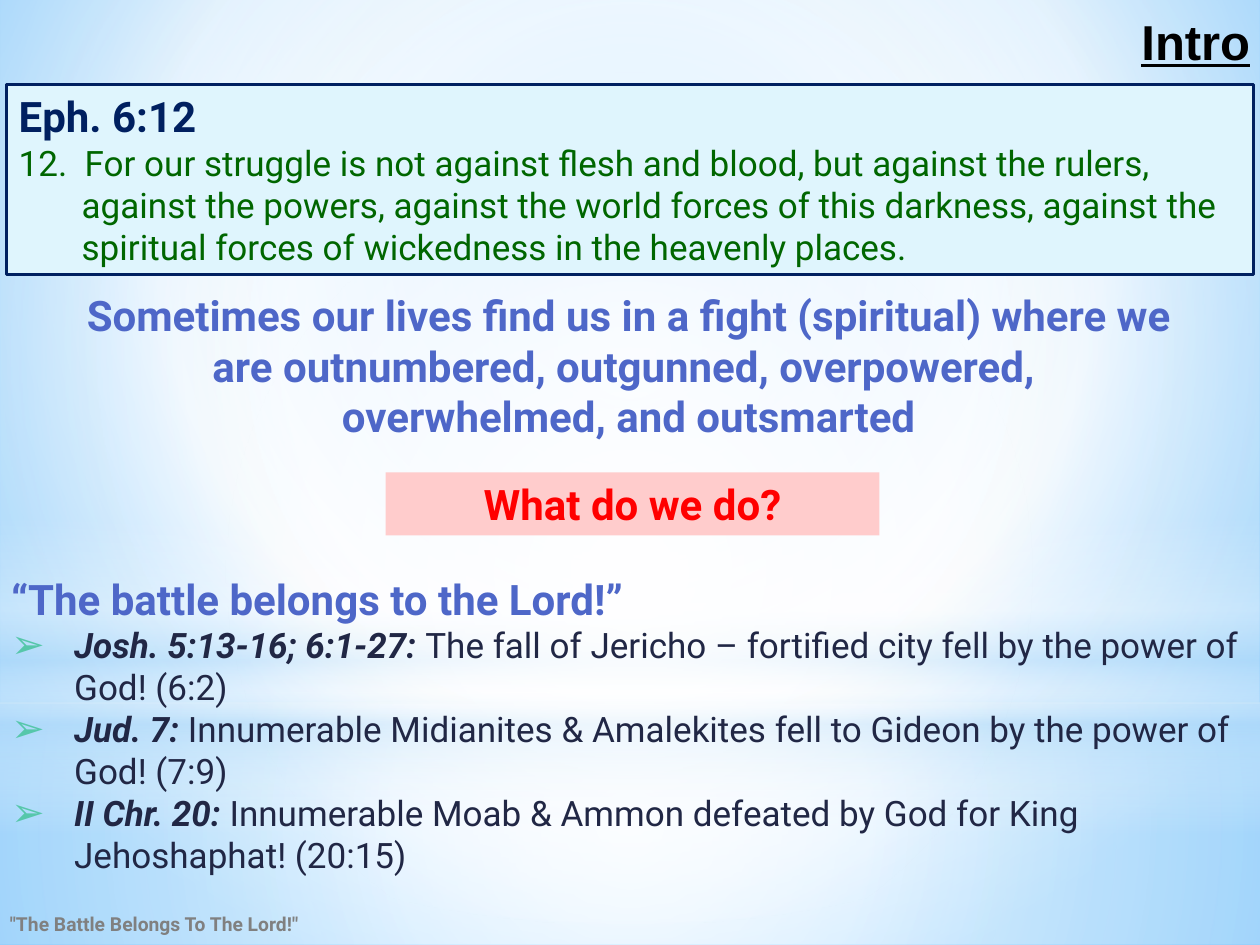
import pptx
import pptx.util
import pptx.oxml
import pptx.oxml.ns
import pptx.dml.color
import pptx.enum.shapes
import pptx.enum.text

Shape = pptx.enum.shapes.MSO_SHAPE
Align = pptx.enum.text.PP_ALIGN
Anchor = pptx.enum.text.MSO_ANCHOR
qn = pptx.oxml.ns.qn


class Theme:
    """Colours, fonts and type sizes of the slide."""
    blue, navy, green, ink = "4E67C8", "002060", "006600", "212745"
    red, pink, pale, mint = "FF0000", "FFCCCC", "DFF5FD", "56C7AA"
    white, sky, grey, black = "FFFFFF", "B4DCFA", "808080", "000000"
    dawn, deep = "9ED5FF", "5BB9FF"
    face, plain = "Roboto", "Arial"
    large, head, body, small = 28, 24, 20, 11


class Deck:
    """Holds the theme and the slide, laid out on 100 columns by 75 rows."""

    def __init__(self, theme):
        self.theme = theme
        self.show = pptx.Presentation()
        self.show.slide_width = pptx.util.Inches(10)
        self.show.slide_height = pptx.util.Inches(7.5)
        self.col = self.show.slide_width / 100
        self.row = self.show.slide_height / 75
        self.slide = self.show.slides.add_slide(self.show.slide_layouts[6])

    def place(self, left, top, width, height):
        """Turn columns and rows into slide lengths."""
        return [round(n * unit) for n, unit in
                zip((left, top, width, height), (self.col, self.row) * 2)]

    def color(self, code):
        """Make a colour from its hex code."""
        return pptx.dml.color.RGBColor.from_string(code)

    def blend(self, fill, root, stops, rect=None):
        """Set a gradient, round when a target rect is given, else downward."""
        fill.solid()
        marks = "".join(
            f'<a:gs pos="{pos * 1000}"><a:srgbClr val="{code}">'
            f'<a:alpha val="{alpha * 1000}"/></a:srgbClr></a:gs>'
            for pos, code, alpha in stops)
        way = '<a:lin ang="5400000" scaled="0"/>'
        if rect:
            sides = " ".join(f'{side}="{n * 1000}"' for side, n in zip("ltrb", rect))
            way = f'<a:path path="circle"><a:fillToRect {sides}/></a:path>'
        grad = pptx.oxml.parse_xml(
            f'<a:gradFill {pptx.oxml.ns.nsdecls("a")} rotWithShape="1">'
            f'<a:gsLst>{marks}</a:gsLst>{way}</a:gradFill>')
        old = next(root.iter(qn("a:solidFill")))
        old.getparent().replace(old, grad)

    def back(self, stops, rect):
        """Paint the slide background."""
        self.blend(self.slide.background.fill, self.slide.element, stops, rect)

    def shape(self, kind, spot, fill=None, line=None):
        """Add a preset shape without shadow."""
        item = self.slide.shapes.add_shape(kind, *self.place(*spot))
        item.shadow.inherit = False
        if fill:
            item.fill.solid()
            item.fill.fore_color.rgb = self.color(fill)
        if line:
            item.line.color.rgb = self.color(line)
            item.line.width = pptx.util.Pt(1.5)
        else:
            item.line.fill.background()
        return item

    def glow(self, kind, spot, stops, rect=(50, 50, 50, 50)):
        """Add a soft gradient shape."""
        item = self.shape(kind, spot)
        self.blend(item.fill, item.element, stops, rect)

    def box(self, spot):
        """Add an empty text box."""
        return self.slide.shapes.add_textbox(*self.place(*spot))

    def label(self, item, lines, align=Align.LEFT, anchor=Anchor.TOP, hang=True):
        """Fill an item with lines, each a list of (text, format) runs."""
        frame = item.text_frame
        frame.word_wrap = True
        frame.vertical_anchor = anchor
        for n, runs in enumerate(lines):
            para = frame.paragraphs[0] if n == 0 else frame.add_paragraph()
            para.alignment = align
            if hang:
                props = para._p.get_or_add_pPr()
                indent = pptx.util.Inches(0.5)
                props.set("marL", str(indent))
                props.set("indent", str(-indent))
            for text, style in runs:
                run = para.add_run()
                run.text = text
                look = {"name": self.theme.face, **style}
                run.font.color.rgb = self.color(look.pop("color"))
                look["size"] = pptx.util.Pt(look["size"])
                for key, value in look.items():
                    setattr(run.font, key, value)
        return frame.paragraphs

    def bullet(self, para, mark="➢"):
        """Put a coloured arrow bullet on a paragraph."""
        props = para._p.get_or_add_pPr()
        space = pptx.oxml.ns.nsdecls("a")
        for tag in (f'<a:buClr {space}><a:srgbClr val="{self.theme.mint}"/></a:buClr>',
                    f'<a:buSzPct {space} val="115000"/>',
                    f'<a:buFont {space} typeface="{self.theme.plain}"/>',
                    f'<a:buChar {space} char="{mark}"/>'):
            props.append(pptx.oxml.parse_xml(tag))


def main():
    """Build and save the slide."""
    t = Theme()
    deck = Deck(t)
    deck.back([(0, t.dawn, 100), (60, t.white, 100), (100, t.deep, 100)],
              (20, 10, 20, 60))
    deck.glow(Shape.RECTANGLE, (0, 55.8, 100, 19.2),
              [(0, t.white, 91), (37, t.white, 76), (100, t.sky, 79)])
    deck.glow(Shape.RECTANGLE, (0, 0, 100, 55.8),
              [(0, t.white, 89), (48, t.white, 62), (100, t.sky, 79)])
    deck.glow(Shape.RECTANGLE, (0, 41.2, 100, 25),
              [(0, t.white, 0), (29, t.white, 30), (45, t.sky, 40),
               (55, t.white, 26), (65, t.sky, 60), (100, t.white, 0)], None)
    deck.glow(Shape.OVAL, (0, 17.5, 100, 55.8),
              [(0, t.white, 100), (56, t.white, 0)])

    head = {"size": t.head, "color": t.blue, "bold": True}
    verse = {"size": t.body, "color": t.green}
    point = {"size": t.body, "color": t.ink}
    cite = {**point, "bold": True, "italic": True}

    deck.label(deck.box((-0.2, 71.6, 36.7, 3.4)),
               [[('"The Battle Belongs To The Lord!"',
                  {"size": t.small, "color": t.grey, "bold": True})]],
               anchor=Anchor.MIDDLE, hang=False)
    deck.label(deck.box((0, -0.1, 100.2, 6.7)),
               [[("Intro", {"size": t.large, "color": t.black, "bold": True,
                            "underline": True, "name": t.plain})]],
               Align.RIGHT, Anchor.MIDDLE, hang=False)
    deck.label(deck.box((-0.2, 22.5, 100.2, 13.1)),
               [[(text, head)] for text in (
                   "Sometimes our lives find us in a fight (spiritual) where we",
                   "are outnumbered, outgunned, overpowered, ",
                   "overwhelmed, and outsmarted")], Align.CENTER)
    deck.label(deck.shape(Shape.RECTANGLE, (30.6, 37.5, 39.2, 5), t.pink),
               [[("What do we do?", {**head, "color": t.red})]], Align.CENTER)
    deck.label(deck.shape(Shape.RECTANGLE, (0.5, 6.7, 99, 15.1), t.pale, t.navy),
               [[("Eph. 6:12", {**head, "color": t.navy})],
                [("12.  For our struggle is not against flesh and blood, but against "
                  "the rulers, against the powers, against the world forces of this "
                  "darkness, against the spiritual forces of wickedness in the "
                  "heavenly places.", verse)]])
    points = [
        ("Josh. 5:13-16; 6:1-27: ",
         "The fall of Jericho – fortified city fell by the power of God! (6:2)"),
        ("Jud. 7:",
         " Innumerable Midianites & Amalekites fell to Gideon by the power of God! (7:9)"),
        ("II Chr. 20:",
         " Innumerable Moab & Ammon defeated by God for King Jehoshaphat! (20:15)")]
    paras = deck.label(deck.box((-0.1, 45, 100.2, 25.2)),
                       [[("“The battle belongs to the Lord!”", head)]]
                       + [[(ref, cite), (text, point)] for ref, text in points])
    for para in paras[1:]:
        deck.bullet(para)
    deck.show.save("out.pptx")


if __name__ == "__main__":
    main()
